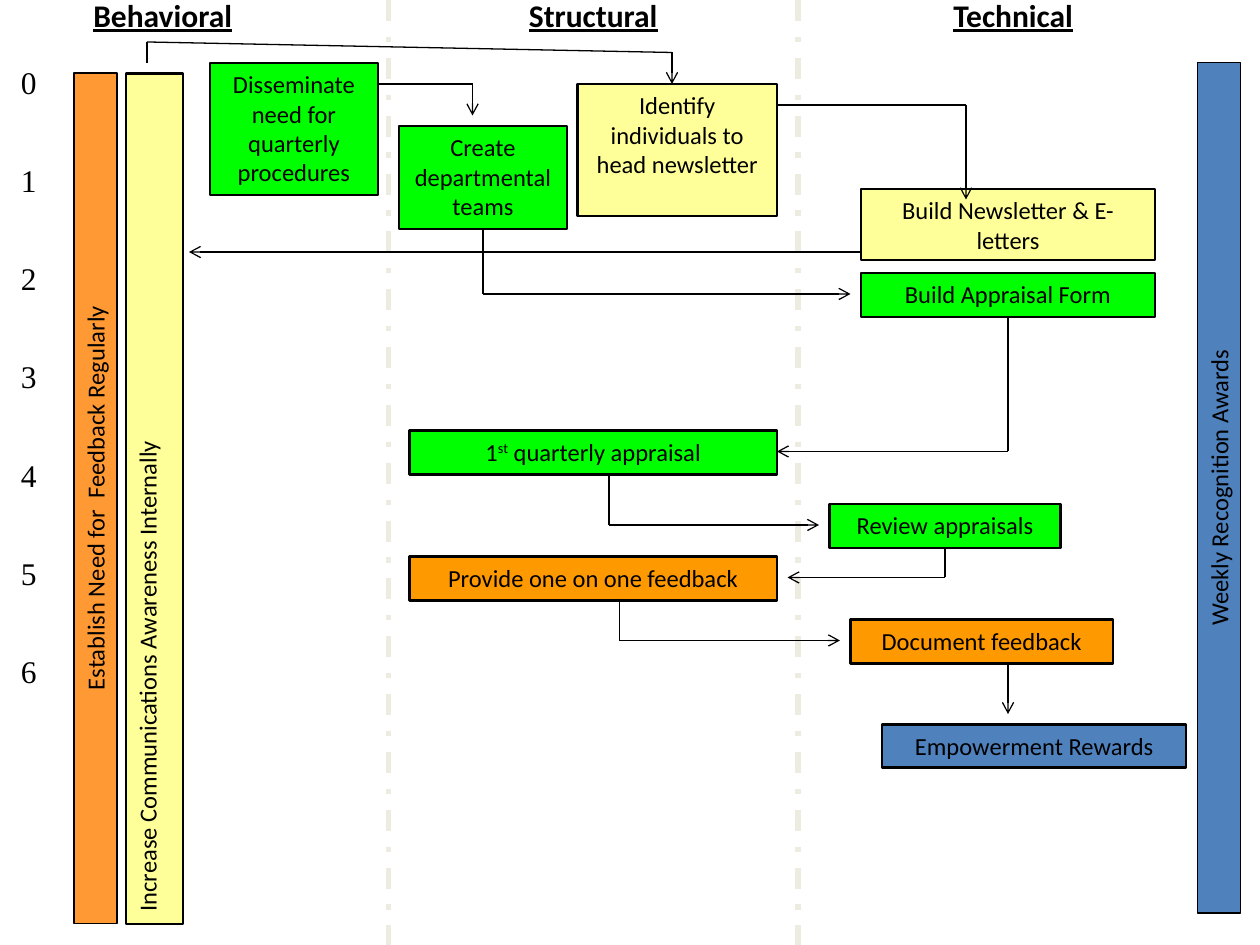
from itertools import pairwise

from lxml import etree
from pptx import Presentation
from pptx.dml.color import RGBColor
from pptx.enum import dml, shapes, text
from pptx.oxml.ns import qn
from pptx import util as u

SCALE = 7620  # EMU per px, 120 px to the inch

BLACK = RGBColor(0x00, 0x00, 0x00)
GREEN = RGBColor(0x00, 0xFF, 0x00)
YELLOW = RGBColor(0xFF, 0xFF, 0x99)
ORANGE = RGBColor(0xFF, 0x99, 0x00)
PALE_ORANGE = RGBColor(0xFF, 0x99, 0x33)
BLUE = RGBColor(0x4F, 0x81, 0xBD)
IVORY = RGBColor(0xEE, 0xEC, 0xE1)


def px(*values):
    return [u.Emu(value * SCALE) for value in values]


class ChartPage:
    """Holds the text style and the slide being filled."""

    style = {"name": "Calibri", "size": u.Pt(14)}

    def __init__(self, deck):
        self.page = deck.slides.add_slide(deck.slide_layouts[6])

    def fill_text(self, frame, spans, **extra):
        frame.word_wrap = True
        frame.auto_size = text.MSO_AUTO_SIZE.SHAPE_TO_FIT_TEXT
        frame.vertical_anchor = text.MSO_ANCHOR.TOP
        para = frame.paragraphs[0]
        para.alignment = text.PP_ALIGN.CENTER
        for wording in spans:
            self.add_span(para, wording, **extra)
        return para

    def add_span(self, para, wording, **extra):
        span = para.add_run()
        span.text = wording
        for name, value in (self.style | extra).items():
            setattr(span.font, name, value)
        span.font.color.rgb = BLACK

    def heading(self, left, wording):
        box = self.page.shapes.add_textbox(*px(left, -10, 210, 48))
        self.fill_text(box.text_frame, [wording],
                       size=u.Pt(18), bold=True, underline=True)

    def scale_labels(self, left, top, width, height, labels):
        frame = self.page.shapes.add_textbox(*px(left, top, width, height)).text_frame
        frame.word_wrap = True
        for side in ("left", "top", "right", "bottom"):
            setattr(frame, f"margin_{side}", 0)
        for index, label in enumerate(labels):
            para = frame.add_paragraph() if index else frame.paragraphs[0]
            para.space_after = u.Pt(34.5)
            self.add_span(para, label, name="Times New Roman", size=u.Pt(18))

    def box(self, left, top, width, height, fill, *spans, border=1.25):
        box = self.page.shapes.add_shape(
            shapes.MSO_SHAPE.RECTANGLE, *px(left, top, width, height))
        box.shadow.inherit = False
        box.fill.solid()
        box.fill.fore_color.rgb = fill
        box.line.color.rgb = BLACK
        box.line.width = u.Pt(border)
        para = self.fill_text(box.text_frame, spans)
        return box, para

    def sideways_bar(self, left, top, width, height, fill, wording):
        """Place a bar whose text reads upwards, by its visible bounds."""
        shift = (height - width) // 2
        bar, _ = self.box(left - shift, top + shift, height, width, fill,
                          wording, border=0.75)
        bar.rotation = 270

    def vertical_bar(self, left, top, width, height, fill, wording):
        bar, _ = self.box(left, top, width, height, fill, wording)
        bar.rotation = 180
        bar._element.txBody.find(qn("a:bodyPr")).set("vert", "eaVert")

    def line(self, start, end, color=BLACK, width=0.75):
        line = self.page.shapes.add_connector(
            shapes.MSO_CONNECTOR.STRAIGHT, *px(*start, *end))
        line.line.color.rgb = color
        line.line.width = u.Pt(width)
        etree.SubElement(line._element.spPr, qn("a:effectLst"))
        return line

    def divider(self, x):
        line = self.line((x, 0), (x, 900), IVORY, 3)
        line.line.dash_style = dml.MSO_LINE.DASH_DOT

    def route(self, *points):
        """Join the points and put an arrowhead on the last stretch."""
        for start, end in pairwise(points):
            line = self.line(start, end)
        outline = line._element.spPr.find(qn("a:ln"))
        etree.SubElement(outline, qn("a:tailEnd"), type="arrow")


def main():
    deck = Presentation()
    deck.slide_width, deck.slide_height = px(1200, 900)
    chart = ChartPage(deck)

    # Column headings and time scale
    for left, wording in ((50, "Behavioral"), (460, "Structural"), (860, "Technical")):
        chart.heading(left, wording)
    chart.scale_labels(20, 60, 40, 751, "0123456")

    # Ongoing activities and column dividers
    chart.sideways_bar(70, 70, 41, 810, PALE_ORANGE,
                       "Establish Need for  Feedback Regularly")
    for x in (370, 760):
        chart.divider(x)
    chart.vertical_bar(120, 70, 54, 810, YELLOW,
                       "Increase Communications Awareness Internally")
    chart.sideways_bar(1140, 60, 41, 810, BLUE, "Weekly Recognition Awards")

    # Steps
    for step in (
        (200, 60, 160, 126, GREEN, "Disseminate need for quarterly procedures"),
        (820, 260, 280, 42, GREEN, "Build Appraisal Form"),
        (820, 180, 280, 68, YELLOW, "Build Newsletter & E- letters"),
        (380, 120, 160, 98, GREEN, "Create departmental teams"),
        (790, 480, 220, 42, GREEN, "Review appraisals"),
        (390, 530, 350, 42, ORANGE, "Provide one on one feedback"),
        (550, 80, 190, 126, YELLOW, "Identify individuals to head newsletter"),
        (810, 590, 250, 42, ORANGE, "Document feedback"),
        (840, 690, 290, 41, BLUE, "Empowerment Rewards"),
    ):
        chart.box(*step)
    _, para = chart.box(390, 410, 350, 42, GREEN, "1", "st", " quarterly appraisal")
    para.runs[1].font._element.set("baseline", "30000")

    # Arrows between steps
    for points in (
        ((740, 100), (920, 100), (920, 190)),
        ((820, 240), (180, 240)),
        ((360, 80), (450, 80), (450, 110)),
        ((460, 218), (460, 280), (810, 280)),
        ((960, 302), (960, 430), (740, 430)),
        ((580, 450), (580, 500), (780, 500)),
        ((900, 522), (900, 550), (750, 550)),
        ((590, 570), (590, 610), (800, 610)),
        ((960, 630), (960, 680)),
        ((140, 60), (140, 40), (640, 50), (640, 80)),
    ):
        chart.route(*points)

    deck.save("out.pptx")


if __name__ == "__main__":
    main()
